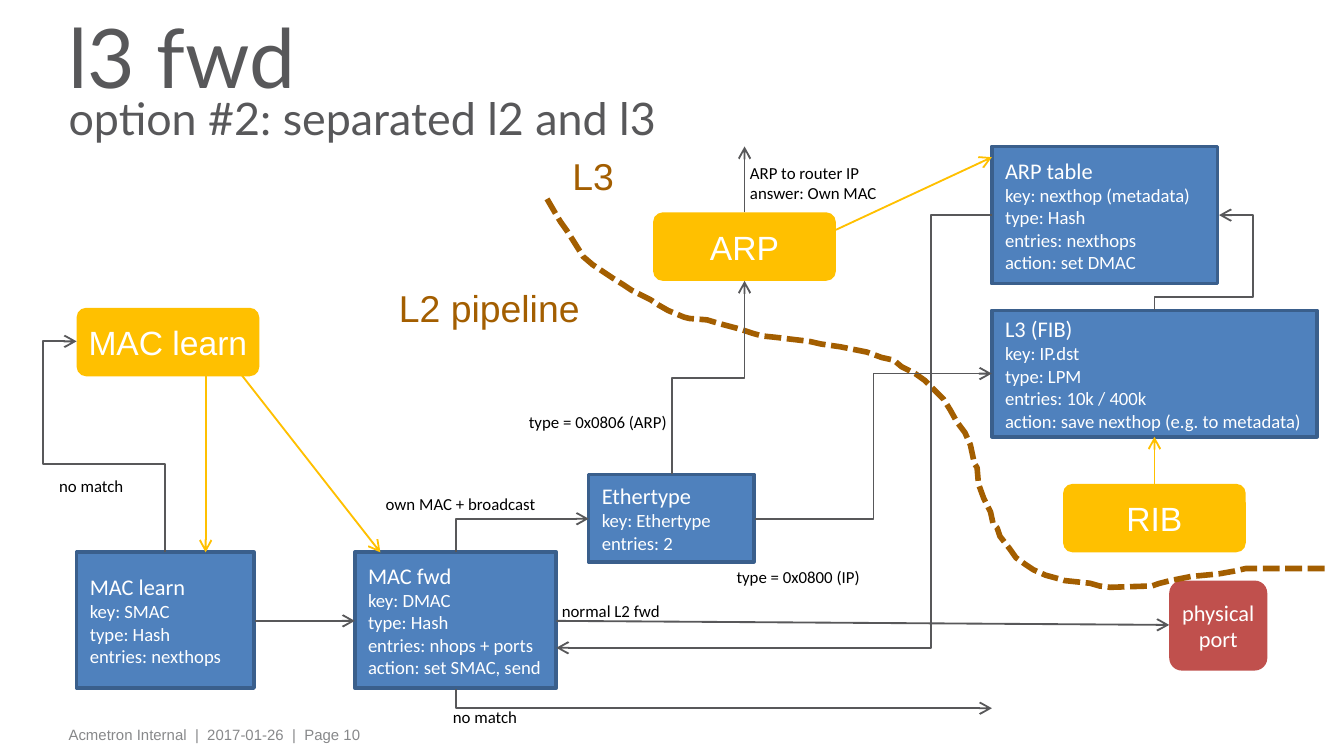
from dataclasses import dataclass

from lxml import etree
from pptx import Presentation
from pptx.dml.color import RGBColor
from pptx.enum.dml import MSO_LINE
from pptx.enum.shapes import MSO_CONNECTOR, MSO_SHAPE
from pptx.enum.text import MSO_ANCHOR, MSO_AUTO_SIZE, PP_ALIGN
from pptx.oxml.ns import qn
from pptx.util import Inches, Pt

RECT, ROUNDED = MSO_SHAPE.RECTANGLE, MSO_SHAPE.ROUNDED_RECTANGLE
STRAIGHT, ELBOW = MSO_CONNECTOR.STRAIGHT, MSO_CONNECTOR.ELBOW
LEFT, CENTER, RIGHT = PP_ALIGN.LEFT, PP_ALIGN.CENTER, PP_ALIGN.RIGHT
TOP, MIDDLE = MSO_ANCHOR.TOP, MSO_ANCHOR.MIDDLE
NO_FIT = MSO_AUTO_SIZE.NONE
SYS_DASH = MSO_LINE.SQUARE_DOT


@dataclass(frozen=True)
class Theme:
    gray: str = "58585A"
    footer: str = "87888A"
    blue: str = "4F81BD"
    edge: str = "3A5F8C"
    yellow: str = "FFC000"
    red: str = "C0504D"
    brown: str = "A35E00"
    white: str = "FFFFFF"
    black: str = "000000"
    title_font: str = "Lato"
    body_font: str = "Calibri"
    plain_font: str = "Arial"
    title: float = 44
    subtitle: float = 24
    zone: float = 20
    process: float = 18
    heading: float = 12
    detail: float = 10
    label: float = 9
    small: float = 8


T = Theme()

TABLES = [
    ((4.38, 3.53, 1.23, 0.65), ["Ethertype \nkey: Ethertype", "entries: 2"]),
    ((7.38, 2.31, 2.42, 0.94), ["L3 (FIB)", "key: IP.dst", "type: LPM",
                                "entries: 10k / 400k\naction: save nexthop (e.g. to metadata)"]),
    ((7.38, 1.09, 1.68, 1.02), ["ARP table", "key: nexthop (metadata)", "type: Hash",
                                "entries: nexthops", "action: set DMAC"]),
    ((0.57, 4.11, 1.32, 1.01), ["MAC learn", "key: SMAC", "type: Hash", "entries: nexthops"]),
    ((2.64, 4.11, 1.5, 1.01), ["MAC fwd", "key: DMAC", "type: Hash", "entries: nhops + ports",
                               "action: set SMAC, send"]),
]
PROCESSES = [(0.57, 2.29, "MAC learn"), (4.86, 1.58, "ARP"), (7.91, 3.6, "RIB")]
LABELS = [
    ((5.44, 4.18, 1.67, 0.22), "type = 0x0800 (IP)", LEFT),
    ((3.81, 3.02, 1.19, 0.24), "type = 0x0806 (ARP)", RIGHT),
    ((2.83, 3.63, 1.67, 0.22), "own MAC + broadcast", LEFT),
    ((4.14, 4.43, 2.13, 0.22), "normal L2 fwd", LEFT),
    ((3.33, 5.22, 1.67, 0.13), "no match", LEFT),
    ((0.4, 3.5, 1.67, 0.22), "no match", LEFT),
    ((5.54, 1.17, 1.9, 0.37), "ARP to router IP\nanswer: Own MAC", LEFT),
]
ARROWS = [
    ((4.14, 4.62), (8.7, 4.65), T.gray),
    ((5.54, 1.58), (5.54, 1.09), T.gray),
    ((1.9, 4.62), (2.64, 4.62), T.gray),
    ((1.53, 2.8), (1.53, 4.11), T.yellow),
    ((1.79, 2.78), (2.83, 4.11), T.yellow),
    ((6.22, 1.71), (7.38, 1.17), T.yellow),
    ((8.59, 3.6), (8.59, 3.25), T.yellow),
]
ELBOWS = [
    ((3.39, 5.13), (7.38, 5.27), True, 2, []),
    ((3.39, 4.11), (4.38, 3.86), True, 2, []),
    ((8.59, 2.31), (9.07, 1.6), True, 4, [14.2, 152.6]),
    ((1.23, 4.11), (0.57, 2.54), True, 4, [41.8, 137.8]),
    ((5, 3.53), (5.54, 2.09), True, 3, [50]),
    ((5.62, 3.86), (7.38, 2.78), False, 3, [50]),
    ((7.38, 1.6), (4.14, 4.82), False, 3, [13.9]),
]
BORDER = [
    (4.07, 1.48), (4.14, 1.6), (4.17, 1.65), (4.22, 1.72), (4.29, 1.83), (4.34, 1.91),
    (4.41, 1.97), (4.47, 2.01), (4.56, 2.07), (4.64, 2.12), (4.7, 2.16), (4.74, 2.18),
    (4.84, 2.23), (4.9, 2.27), (4.97, 2.31), (5.09, 2.36), (5.13, 2.37), (5.26, 2.38),
    (5.36, 2.41), (5.51, 2.45), (5.6, 2.48), (5.67, 2.5), (5.77, 2.51), (6.02, 2.54),
    (6.11, 2.56), (6.25, 2.58), (6.45, 2.62), (6.56, 2.66), (6.65, 2.68), (6.71, 2.73),
    (6.81, 2.78), (6.88, 2.83), (6.96, 2.91), (7.02, 2.97), (7.07, 3.05), (7.12, 3.14),
    (7.18, 3.22), (7.22, 3.31), (7.25, 3.45), (7.27, 3.48), (7.28, 3.6), (7.32, 3.71),
    (7.37, 3.81), (7.39, 3.9), (7.42, 3.93), (7.44, 3.99), (7.51, 4.08), (7.56, 4.15),
    (7.63, 4.2), (7.69, 4.24), (7.78, 4.28), (7.89, 4.31), (7.92, 4.32), (8.11, 4.34),
    (8.18, 4.36), (8.26, 4.37), (8.57, 4.36), (8.63, 4.34), (8.71, 4.32), (8.86, 4.29),
    (9.07, 4.27), (9.18, 4.25), (9.27, 4.23), (9.89, 4.23),
]


def rgb(color):
    return RGBColor.from_string(color)


def add_run(p, text, size, font, color):
    r = p.add_run()
    r.text = text
    r.font.size, r.font.name = Pt(size), font
    r.font.color.rgb = rgb(color)


def add_break(p, size):
    p.add_line_break()
    etree.SubElement(p._p.findall(qn("a:br"))[-1], qn("a:rPr"), sz=str(size * 100))


def set_frame(tf, insets, anchor=TOP, wrap=True):
    tf.word_wrap, tf.auto_size, tf.vertical_anchor = wrap, NO_FIT, anchor
    tf.margin_left = tf.margin_right = Inches(insets[0])
    tf.margin_top = tf.margin_bottom = Inches(insets[1])


def write_paragraphs(tf, texts, first, rest, font, color, align=LEFT):
    size = first
    for i, text in enumerate(texts):
        p = tf.add_paragraph() if i else tf.paragraphs[0]
        p.alignment = align
        for j, line in enumerate(text.split("\n")):
            if j:
                add_break(p, size)
            add_run(p, line, size, font, color)
            size = rest


def add_text(s, at, text, size, font, color, insets, align=LEFT):
    tf = s.shapes.add_textbox(*map(Inches, at)).text_frame
    set_frame(tf, insets)
    write_paragraphs(tf, [text], size, size, font, color, align)


def add_box(s, kind, at, fill, edge=None):
    sp = s.shapes.add_shape(kind, *map(Inches, at))
    sp.shadow.inherit = False
    sp.fill.solid()
    sp.fill.fore_color.rgb = rgb(fill)
    if edge:
        sp.line.color.rgb, sp.line.width = rgb(edge), Pt(2)
    else:
        sp.line.fill.background()
    if kind == ROUNDED:
        sp.adjustments[0] = 0.14
    return sp


def add_table_box(s, at, texts):
    tf = add_box(s, RECT, at, T.blue, T.edge).text_frame
    set_frame(tf, (0.1, 0), MIDDLE)
    write_paragraphs(tf, texts, T.heading, T.detail, T.body_font, T.white)


def add_rounded(s, at, fill, text, size, font, insets):
    tf = add_box(s, ROUNDED, at, fill).text_frame
    set_frame(tf, insets, MIDDLE, wrap=False)
    write_paragraphs(tf, [text], size, size, font, T.white, CENTER)


def add_arrow(s, start, end, color, kind=STRAIGHT):
    c = s.shapes.add_connector(kind, *map(Inches, (*start, *end)))
    c.line.color.rgb, c.line.width = rgb(color), Pt(1)
    etree.SubElement(c.line._get_or_add_ln(), qn("a:tailEnd"), type="arrow")
    etree.SubElement(c._element.spPr, qn("a:effectLst"))
    return c


def add_elbow(s, start, end, vertical, segments, percents):
    (x1, y1), (x2, y2) = start, end
    if vertical:
        cx, cy, dx, dy = (x1 + x2) / 2, (y1 + y2) / 2, (x2 - x1) / 2, (y2 - y1) / 2
        start, end = (cx + dy, cy - dx), (cx - dy, cy + dx)
    c = add_arrow(s, start, end, T.gray, ELBOW)
    spPr = c._element.spPr
    if vertical:
        spPr.find(qn("a:xfrm")).set("rot", str(270 * 60000))
    geom = spPr.find(qn("a:prstGeom"))
    geom.set("prst", f"bentConnector{segments}")
    av = geom.find(qn("a:avLst"))
    for i, value in enumerate(percents, 1):
        etree.SubElement(av, qn("a:gd"), name=f"adj{i}", fmla=f"val {round(value * 1000)}")


def add_border(s):
    points = [(round(x * 100), round(y * 100)) for x, y in BORDER]
    fb = s.shapes.build_freeform(*points[0], scale=Inches(0.01))
    fb.add_line_segments(points[1:], close=False)
    sp = fb.convert_to_shape()
    sp.shadow.inherit = False
    sp.fill.background()
    sp.line.color.rgb, sp.line.width = rgb(T.brown), Pt(3)
    sp.line.dash_style = SYS_DASH


def set_title(s):
    sp = s.shapes.title
    sp.left, sp.top, sp.width, sp.height = map(Inches, (0.43, 0.2, 8.2, 0.89))
    set_frame(sp.text_frame, (0.08, 0), MIDDLE)
    p = sp.text_frame.paragraphs[0]
    p.alignment, p.line_spacing = LEFT, 0.75
    add_run(p, "l3 fwd", T.title, T.title_font, T.gray)
    add_break(p, T.title)
    add_run(p, "option #2: separated l2 and l3", T.subtitle, T.title_font, T.gray)


def main():
    prs = Presentation()
    prs.slide_width, prs.slide_height = Inches(10), Inches(10) * 9 // 16
    s = prs.slides.add_slide(prs.slide_layouts[5])
    set_title(s)
    add_text(s, (0.43, 5.35, 8.09, 0.18), "Acmetron Internal  |  2017-01-26  |  Page 10",
             T.small, T.plain_font, T.footer, (0.08, 0.05))
    for at, texts in TABLES:
        add_table_box(s, at, texts)
    for at, text, align in LABELS:
        add_text(s, at, text, T.label, T.body_font, T.black, (0.04, 0.04), align)
    for x, y, name in PROCESSES:
        add_rounded(s, (x, y, 1.36, 0.51), T.yellow, name, T.process, T.plain_font, (0.06, 0.04))
    add_rounded(s, (8.7, 4.32, 0.73, 0.67), T.red, "physical\nport",
                T.heading, T.body_font, (0.08, 0.05))
    for start, end, color in ARROWS:
        add_arrow(s, start, end, color)
    add_border(s)
    for at, name in [((2.87, 2.07, 1.76, 0.44), "L2 pipeline"), ((4.16, 1.09, 0.7, 0.44), "L3")]:
        add_text(s, at, name, T.zone, T.plain_font, T.brown, (0.1, 0.05))
    for elbow in ELBOWS:
        add_elbow(s, *elbow)
    prs.save("out.pptx")


if __name__ == "__main__":
    main()
